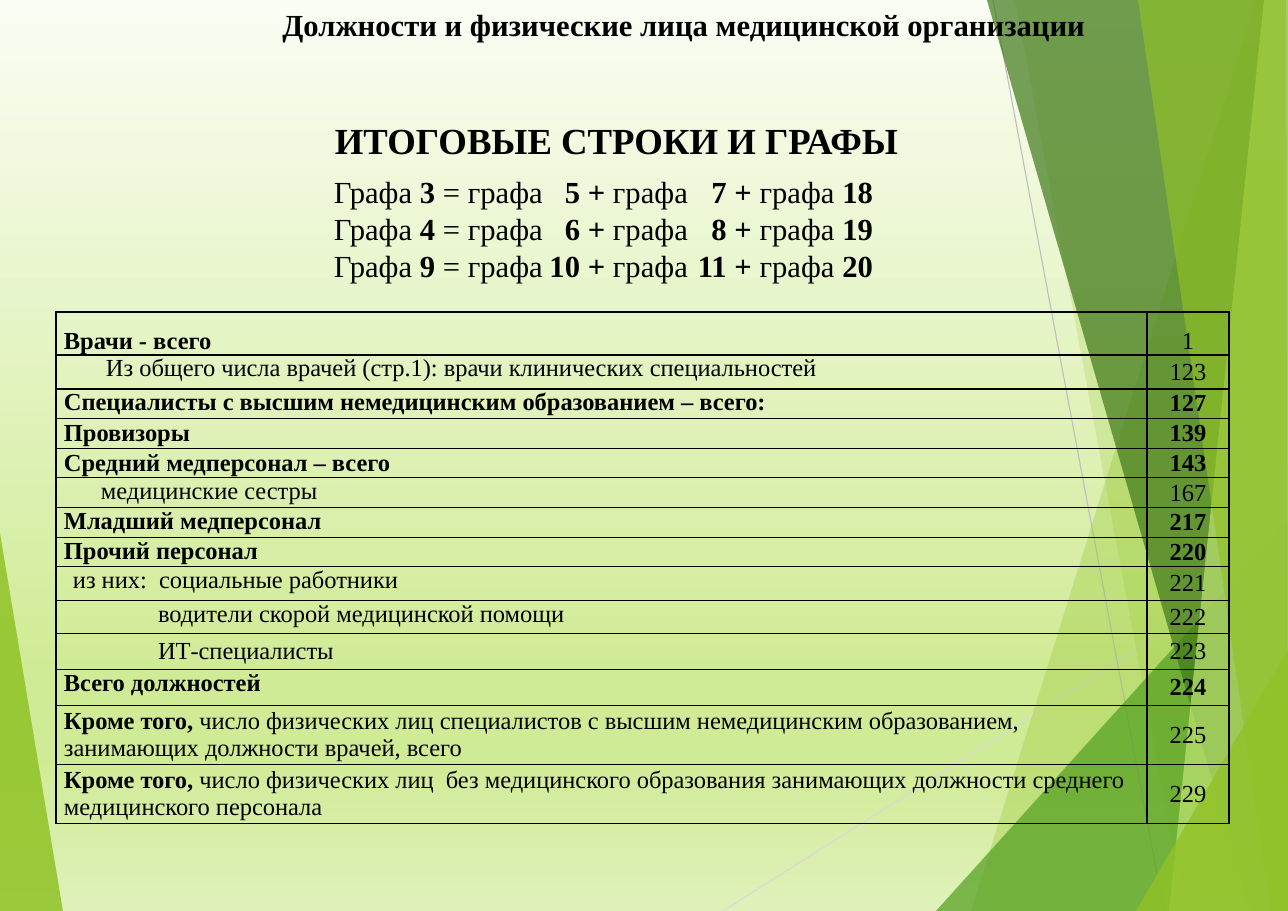
import pptx
import pptx.dml.color
import pptx.enum.shapes
import pptx.enum.text
import pptx.oxml.ns
import pptx.util
from lxml import etree

PX = 8298  # EMU per px
WIDTH, HEIGHT = 1288, 911
FONT = "Times New Roman"
qn = pptx.oxml.ns.qn
ALIGN = pptx.enum.text.PP_ALIGN
ANCHOR = pptx.enum.text.MSO_ANCHOR


def color(code):
    return pptx.dml.color.RGBColor.from_string(code)


def write(paragraph, text, size, align=ALIGN.LEFT):
    """Fill a paragraph; parts between asterisks are bold."""
    paragraph.alignment = align
    paragraph.font.name = FONT
    paragraph.font.size = pptx.util.Pt(size)
    paragraph.font.color.rgb = color("000000")
    for index, part in enumerate(text.split("*")):
        if part:
            run = paragraph.add_run()
            run.text = part
            run.font.bold = index % 2 == 1


deck = pptx.Presentation()
deck.slide_width, deck.slide_height = WIDTH * PX, HEIGHT * PX
slide = deck.slides.add_slide(deck.slide_layouts[5])

# Background gradient
slide.background.fill.gradient()
slide.background.fill.gradient_angle = 270
stops = next(slide._element.iter(qn("a:gsLst")))
for stop in list(stops):
    stops.remove(stop)
for percent, code in [(0, "FAFDF3"), (74, "D0EB96"), (83, "D0EB96"), (100, "DFF1B9")]:
    stop = etree.SubElement(stops, qn("a:gs"), pos=str(percent * 1000))
    etree.SubElement(stop, qn("a:srgbClr"), val=code)

# Thin rays and green facets
rays = [(723, HEIGHT, WIDTH, 554, "D9D9D9"), (993, 0, 1164, HEIGHT, "BFBFBF")]
for x1, y1, x2, y2, code in rays:
    ray = slide.shapes.add_connector(
        pptx.enum.shapes.MSO_CONNECTOR.STRAIGHT, x1 * PX, y1 * PX, x2 * PX, y2 * PX)
    ray.line.color.rgb = color(code)
    ray.line.width = pptx.util.Pt(0.75)
    etree.SubElement(ray._element.spPr, qn("a:effectLst"))

corner, top_right = (WIDTH, HEIGHT), (WIDTH, 0)
facets = [
    ([(0, 533), (63, HEIGHT), (0, HEIGHT)], "90C226", 85),
    ([(1256, 0), (971, HEIGHT), corner, top_right], "90C226", 30),
    ([(1015, 0), (1185, HEIGHT), corner, top_right], "90C226", 20),
    ([(936, HEIGHT), (WIDTH, 521), corner], "54A021", 72),
    ([(987, 0), (1250, HEIGHT), corner, top_right], "3F7819", 70),
    ([(1264, 0), (1169, HEIGHT), corner, top_right], "C0E474", 70),
    ([(1138, 0), (1271, HEIGHT), corner, (1286, 0)], "90C226", 65),
    ([(1136, HEIGHT), (WIDTH, 650), corner], "90C226", 80),
]
for points, code, opacity in facets:
    outline = slide.shapes.build_freeform(*points[0], scale=PX)
    outline.add_line_segments(points[1:], close=True)
    facet = outline.convert_to_shape()
    facet.shadow.inherit = False
    facet.line.fill.background()
    facet.fill.solid()
    facet.fill.fore_color.rgb = color(code)
    tint = next(facet._element.spPr.iter(qn("a:srgbClr")))
    etree.SubElement(tint, qn("a:alpha"), val=str(opacity * 1000))

# Title, in front of the facets
title = slide.shapes.title
slide.shapes._spTree.append(title._element)
title.left, title.top, title.width, title.height = 80 * PX, 0, 1208 * PX, 105 * PX
title.text_frame.auto_size = pptx.enum.text.MSO_AUTO_SIZE.NONE
title.text_frame.vertical_anchor = ANCHOR.TOP
write(title.text_frame.paragraphs[0],
      "*Должности и физические лица медицинской организации*", 20, ALIGN.CENTER)

# Sums of columns, lined up by right-aligned tabs
sums = slide.shapes.add_textbox(83 * PX, 168 * PX, 1042 * PX, 122 * PX).text_frame
sums.word_wrap = True
sums.margin_left = 251 * PX
for index, terms in enumerate([(3, 5, 7, 18), (4, 6, 8, 19), (9, 10, 11, 20)]):
    line = sums.add_paragraph() if index else sums.paragraphs[0]
    write(line, "Графа *{}* = графа\t*{} +* графа\t*{} +* графа *{}*".format(*terms), 20)
    tabs = etree.Element(qn("a:tabLst"))
    for position in (354, 539):
        etree.SubElement(tabs, qn("a:tab"), pos=str(position * PX), algn="r")
    line._p.get_or_add_pPr().insert(0, tabs)
    line.line_spacing = pptx.util.Pt(24)

heading = slide.shapes.add_textbox(159 * PX, 112 * PX, 915 * PX, 55 * PX).text_frame
heading.word_wrap = True
write(heading.paragraphs[0], "*ИТОГОВЫЕ СТРОКИ И ГРАФЫ*", 24, ALIGN.CENTER)

# Staff table: height, indent, anchor, wording, line number
TOP, MIDDLE, BOTTOM = ANCHOR.TOP, ANCHOR.MIDDLE, ANCHOR.BOTTOM
staff = [
    (43, 0, BOTTOM, "*Врачи - всего*", "1"),
    (34, 42, TOP, "Из общего числа врачей (стр.1): врачи клинических специальностей", "123"),
    (29, 0, TOP, "*Специалисты с высшим немедицинским образованием – всего:*", "*127*"),
    (30, 0, MIDDLE, "*Провизоры*", "*139*"),
    (29, 0, MIDDLE, "*Средний медперсонал – всего*", "*143*"),
    (30, 37, TOP, "медицинские сестры", "167"),
    (29, 0, TOP, "*Младший медперсонал*", "*217*"),
    (29, 0, TOP, "*Прочий персонал*", "*220*"),
    (34, 9, TOP, "из них:  социальные работники", "221"),
    (33, 94, TOP, "водители скорой медицинской помощи", "222"),
    (36, 94, MIDDLE, "ИТ-специалисты", "223"),
    (36, 0, TOP, "*Всего должностей*", "*224*"),
    (59, 0, MIDDLE, "*Кроме того,* число физических лиц специалистов с высшим немедицинским "
     "образованием, занимающих должности врачей, всего", "225"),
    (59, 0, MIDDLE, "*Кроме того,* число физических лиц  без медицинского образования "
     "занимающих должности среднего медицинского персонала", "229"),
]
table = slide.shapes.add_table(
    len(staff), 2, 56 * PX, 312 * PX, 1173 * PX, sum(row[0] for row in staff) * PX).table
table.first_row = table.horz_banding = False
table.columns[0].width, table.columns[1].width = 1091 * PX, 82 * PX
for index, (height, indent, anchor, wording, number) in enumerate(staff):
    table.rows[index].height = height * PX
    for column, text in enumerate((wording, number)):
        cell = table.cell(index, column)
        cell.margin_left = cell.margin_right = 8 * PX
        cell.margin_top = cell.margin_bottom = 0
        cell.vertical_anchor = MIDDLE if column and index else anchor
        paragraph = cell.text_frame.paragraphs[0]
        write(paragraph, text, 16, ALIGN.CENTER if column else ALIGN.LEFT)
        if index == 0:
            paragraph.space_before = pptx.util.Pt(3)
        if indent and column == 0:
            paragraph._p.get_or_add_pPr().set("marL", str(indent * PX))
        properties = cell._tc.get_or_add_tcPr()
        for side in ("a:lnL", "a:lnR", "a:lnT", "a:lnB"):
            border = etree.SubElement(properties, qn(side), w="12700")
            ink = etree.SubElement(border, qn("a:solidFill"))
            etree.SubElement(ink, qn("a:srgbClr"), val="000000")
        cell.fill.background()

deck.save("out.pptx")
